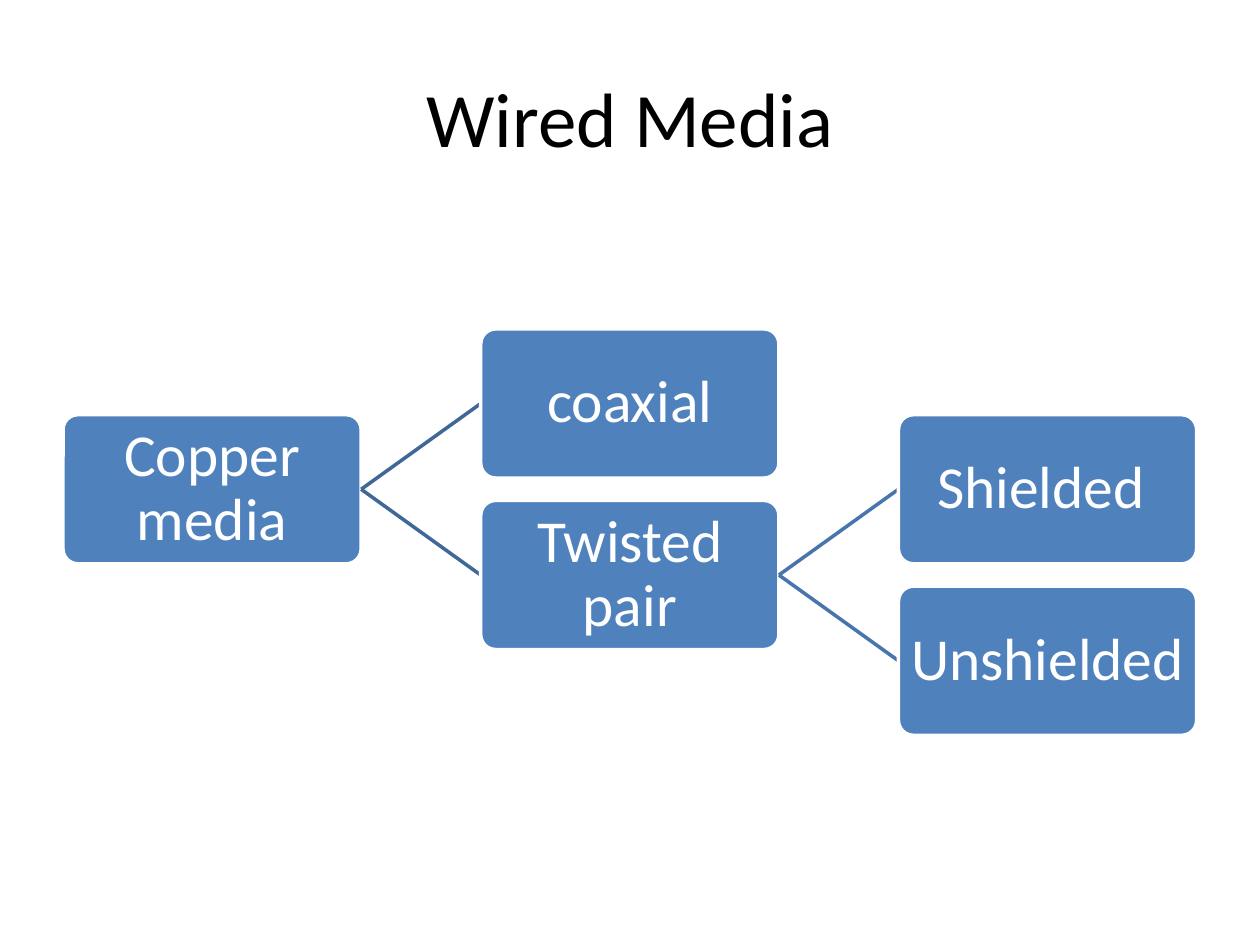
from dataclasses import dataclass

from lxml import etree
from pptx import Presentation
from pptx.dml.color import RGBColor as Rgb
from pptx.enum import shapes, text
from pptx.oxml import ns
from pptx.util import Pt


@dataclass
class Theme:
    font: str = "Calibri"
    black: str = "000000"
    white: str = "FFFFFF"
    blue: str = "4F81BD"
    near: str = "3F6797"
    far: str = "4875AC"
    title: int = 44
    label: int = 34
    line: int = 2


theme = Theme()


def write(shape, words, size, color, inset=None, spacing=1.0):
    frame = shape.text_frame
    frame.word_wrap = True
    frame.vertical_anchor = text.MSO_ANCHOR.MIDDLE
    if inset is not None:
        frame.margin_left = frame.margin_right = Pt(inset)
        frame.margin_top = frame.margin_bottom = Pt(inset)
    para = frame.paragraphs[0]
    para.alignment = text.PP_ALIGN.CENTER
    para.line_spacing = spacing
    run = para.add_run()
    run.text = words
    run.font.name = theme.font
    run.font.size = Pt(size)
    run.font.color.rgb = Rgb.from_string(color)


deck = Presentation()
deck.slide_width, deck.slide_height = Pt(720), Pt(540)
slide = deck.slides.add_slide(deck.slide_layouts[6])

# Title
title = slide.shapes.add_textbox(Pt(36), Pt(21.6), Pt(648), Pt(90))
write(title, "Wired Media", size=theme.title, color=theme.black)

# Tree: label, column, half-row steps from the root, parent, link colour
left, top, wide, high = 36, 237, 170.4, 85.2
across, down = 238.7, 49
tree = [
    ("Copper media", 0, 0, None, None),
    ("coaxial", 1, -1, "Copper media", theme.near),
    ("Twisted pair", 1, 1, "Copper media", theme.near),
    ("Shielded ", 2, 0, "Twisted pair", theme.far),
    ("Unshielded", 2, 2, "Twisted pair", theme.far),
]
boxes = {}
for label, col, row, parent, color in tree:
    # Link goes in first, so that the child box lies over its end
    link = None
    if parent:
        link = slide.shapes.add_connector(shapes.MSO_CONNECTOR.STRAIGHT, 0, 0, 0, 0)
        link.line.color.rgb = Rgb.from_string(color)
        link.line.width = Pt(theme.line)
        etree.SubElement(link.element.spPr, ns.qn("a:effectLst"))

    box = slide.shapes.add_shape(
        shapes.MSO_SHAPE.ROUNDED_RECTANGLE,
        Pt(left + col * across), Pt(top + row * down), Pt(wide), Pt(high))
    box.adjustments[0] = 0.1
    box.shadow.inherit = False
    box.fill.solid()
    box.fill.fore_color.rgb = Rgb.from_string(theme.blue)
    box.line.color.rgb = Rgb.from_string(theme.white)
    box.line.width = Pt(theme.line)
    write(box, label, size=theme.label, color=theme.white, inset=2, spacing=0.9)
    boxes[label] = box

    if link is not None:
        link.begin_connect(boxes[parent], 3)
        link.end_connect(box, 1)

deck.save("out.pptx")
